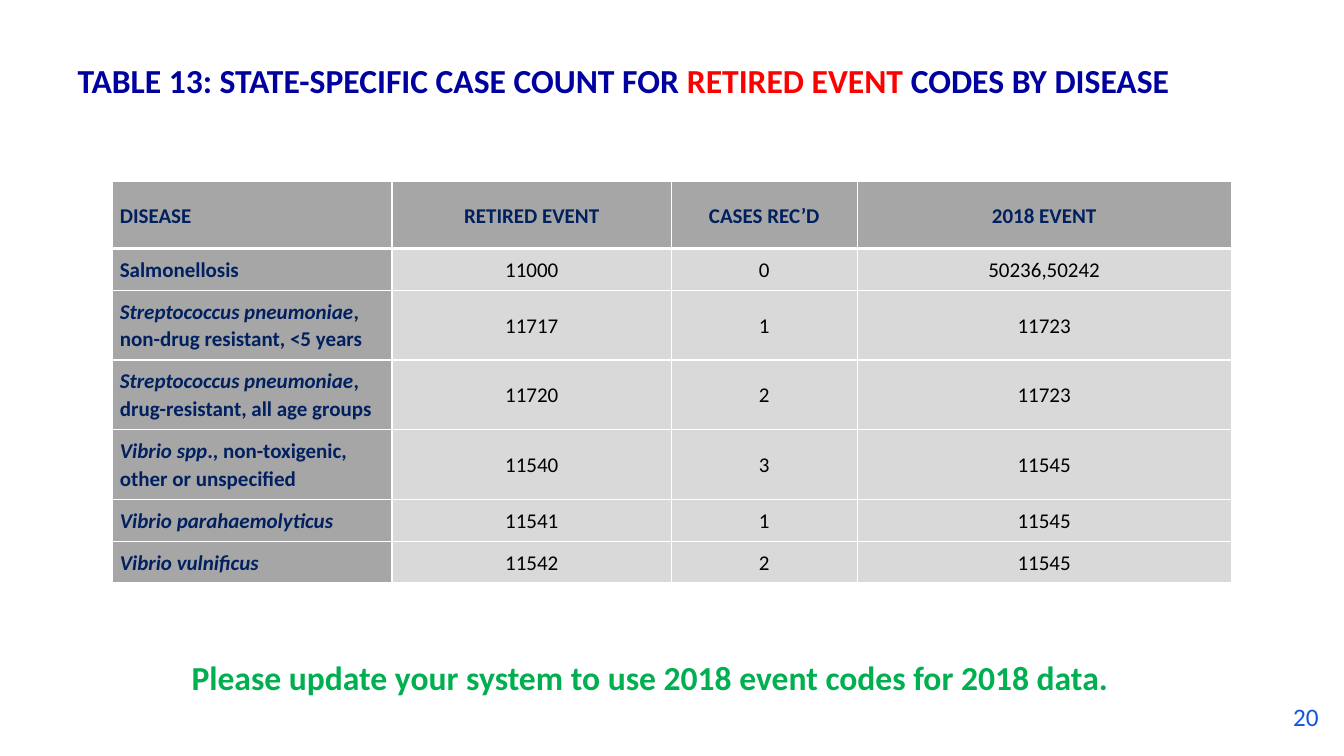
"""Build the slide on retired event codes by disease."""
from lxml.etree import SubElement as Sub
from pptx import Presentation
from pptx.dml.color import RGBColor as RGB
from pptx.enum.text import MSO_ANCHOR as Anchor, MSO_AUTO_SIZE as Auto, PP_ALIGN as Align
from pptx.oxml.ns import qn
from pptx.util import Cm, Pt

HUES = {
    "title": "0000A0", "alert": "FF0000", "note": "00B050", "page": "0F56DC",
    "navy": "002060", "black": "000000", "white": "FFFFFF",
    "dark": "A6A6A6", "light": "D9D9D9",
}


def write(para, parts, size, align, space=1.0):
    """Fill a paragraph with (text, hue, bold, italic) parts."""
    para.alignment, para.line_spacing = align, space
    for text, hue, bold, slant in parts:
        run = para.add_run()
        run.text = text
        style = {"name": "Calibri", "size": Pt(size), "bold": bold, "italic": slant}
        for key, value in style.items():
            setattr(run.font, key, value)
        run.font.color.rgb = RGB.from_string(HUES[hue])


def edge(cell, heavy):
    """Draw white borders, with a thick lower one if heavy."""
    props = cell._tc.get_or_add_tcPr()
    for spot, side in enumerate("LRTB"):
        width = Pt(3 if heavy and side == "B" else 1)
        line = Sub(props, qn(f"a:ln{side}"), w=str(width))
        Sub(Sub(line, qn("a:solidFill")), qn("a:srgbClr"), val=HUES["white"])
        props.insert(spot, line)


deck = Presentation()
deck.slide_width, deck.slide_height = Cm(33.87), Cm(19.05)
slide = deck.slides.add_slide(deck.slide_layouts[5])

title = slide.shapes.title
place = {"left": Cm(1.7), "top": Cm(0.76), "width": Cm(30.48), "height": Cm(2.49)}
for key, value in place.items():
    setattr(title, key, value)
title.text_frame.vertical_anchor = Anchor.MIDDLE
title.text_frame.auto_size = Auto.NONE
heading = [
    ("TABLE 13: STATE-SPECIFIC CASE COUNT FOR ", "title", True, False),
    ("RETIRED EVENT ", "alert", True, False),
    ("CODES BY DISEASE", "title", True, False),
]
write(title.text_frame.paragraphs[0], heading, 24, Align.LEFT)

notes = [
    ("Please update your system to use 2018 event codes for 2018 data.", "note", True, 24,
     Align.CENTER, 0.8, (1.14, 15.11, 30.48, 2.46),
     {"vertical_anchor": Anchor.BOTTOM, "margin_bottom": 0}),
    ("20", "page", False, 18, Align.RIGHT, 1.0, (30.28, 17.55, 3.2, 1.02), {}),
]
for text, hue, bold, size, align, space, box, extra in notes:
    frame = slide.shapes.add_textbox(*map(Cm, box)).text_frame
    for key, value in ({"word_wrap": True} | extra).items():
        setattr(frame, key, value)
    write(frame.paragraphs[0], [(text, hue, bold, False)], size, align, space)

heads = ["DISEASE", "RETIRED EVENT", "CASES REC’D", "2018 EVENT"]
rows = [
    ([("", "Salmonellosis")], "11000", "0", "50236,50242"),
    ([("Streptococcus pneumoniae", ","), ("", "non-drug resistant, <5 years")],
     "11717", "1", "11723"),
    ([("Streptococcus pneumoniae", ","), ("", "drug-resistant, all age groups")],
     "11720", "2", "11723"),
    ([("Vibrio spp", "., non-toxigenic, other or unspecified")], "11540", "3", "11545"),
    ([("Vibrio parahaemolyticus", "")], "11541", "1", "11545"),
    ([("Vibrio vulnificus", "")], "11542", "2", "11545"),
]
grid = [heads, *rows]
wide = [7.04, 7.04, 4.68, 9.43]
tall = [1.68, 1.05, 1.76, 1.76, 1.76, 1.05, 1.05]
table = slide.shapes.add_table(
    len(grid), len(heads), Cm(2.84), Cm(4.58), Cm(sum(wide)), Cm(sum(tall))).table
for col, width in zip(table.columns, wide):
    col.width = Cm(width)
for row, height in zip(table.rows, tall):
    row.height = Cm(height)

for r, row in enumerate(grid):
    for c, value in enumerate(row):
        cell = table.cell(r, c)
        label = r == 0 or c == 0
        form = {f"margin_{side}": Cm(0.18) for side in ("left", "right", "top", "bottom")}
        form["vertical_anchor"] = Anchor.TOP if r and c == 0 else Anchor.MIDDLE
        for key, setting in form.items():
            setattr(cell, key, setting)
        cell.fill.solid()
        cell.fill.fore_color.rgb = RGB.from_string(HUES["dark" if label else "light"])
        edge(cell, r == 0)
        lines = [("", value)] if isinstance(value, str) else value
        for n, (slant, plain) in enumerate(lines):
            frame = cell.text_frame
            para = frame.add_paragraph() if n else frame.paragraphs[0]
            hue = "navy" if label else "black"
            pair = [(slant, hue, label, True), (plain, hue, label, False)]
            parts = [part for part in pair if part[0]]
            write(para, parts, 15, Align.CENTER if c else Align.LEFT, 1.07)

deck.save("out.pptx")
